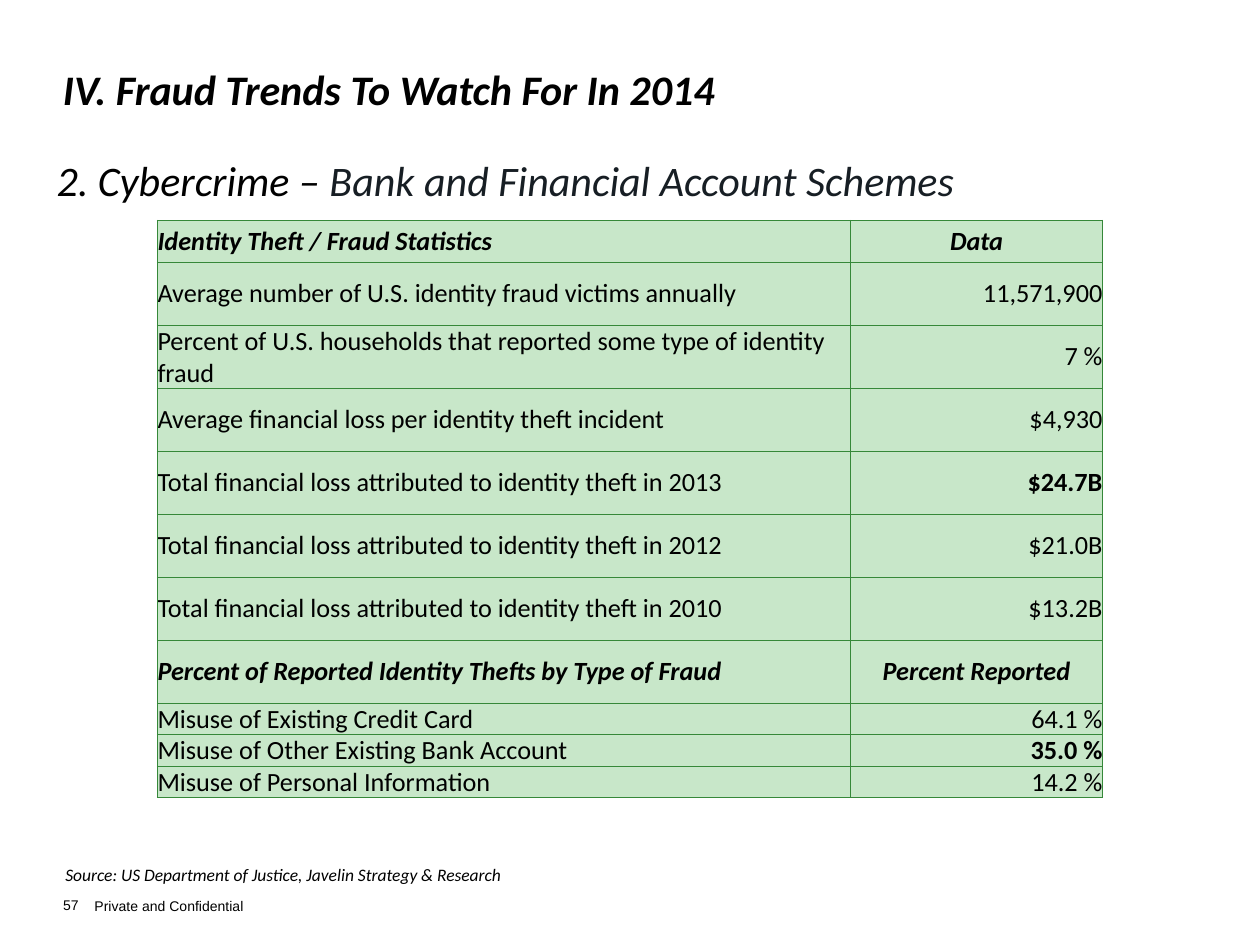
"""Build the identity theft statistics slide."""
from lxml import etree
from pptx import Presentation, util as u
from pptx.dml.color import RGBColor
from pptx.enum import text as t
from pptx.oxml.ns import qn

BLACK, NAVY, GREEN, MINT = "000000", "171E24", "368839", "C8E7C9"
LEFT, MID, RIGHT = t.PP_ALIGN.LEFT, t.PP_ALIGN.CENTER, t.PP_ALIGN.RIGHT
TOP, LOW = t.MSO_ANCHOR.TOP, t.MSO_ANCHOR.BOTTOM

# Each box: place, runs, font, size, bold, italic, anchor, wrap, inset
BOXES = [
    ((0.5, 0.5, 9, 0.75), [("IV. Fraud Trends To Watch For In 2014", BLACK)],
     "Calibri", 24, True, True, TOP, True, (0, 0)),
    ((0.45, 1.17, 8.8, 4.5),
     [("2. Cybercrime – ", BLACK), ("Bank and Financial Account Schemes", NAVY)],
     "Calibri", 24, False, True, TOP, True, (0, 0)),
    ((0.42, 6.81, 6.42, 0.27),
     [("Source: US Department of Justice, Javelin Strategy & Research", BLACK)],
     "Calibri", 10, False, True, TOP, True, (0.1, 0.05)),
    ((0.5, 7.01, 0.31, 0.24), [("57", BLACK)],
     "Arial", 8, False, False, LOW, True, (0, 0)),
    ((0.75, 7.12, 1.2, 0.14), [("Private and Confidential", BLACK)],
     "Arial", 8, False, False, LOW, False, (0, 0)),
]
ROWS = [
    ("Identity Theft / Fraud Statistics", "Data", 0.33),
    ("Average number of U.S. identity fraud victims annually", "11,571,900", 0.5),
    ("Percent of U.S. households that reported some type of identity fraud", "7 %", 0.5),
    ("Average financial loss per identity theft incident", "$4,930", 0.5),
    ("Total financial loss attributed to identity theft in 2013", "$24.7B", 0.5),
    ("Total financial loss attributed to identity theft in 2012", "$21.0B", 0.5),
    ("Total financial loss attributed to identity theft in 2010", "$13.2B", 0.5),
    ("Percent of Reported Identity Thefts by Type of Fraud", "Percent Reported", 0.5),
    ("Misuse of Existing Credit Card", "64.1 %", 0.25),
    ("Misuse of Other Existing Bank Account", "35.0 %", 0.25),
    ("Misuse of Personal Information", "14.2 %", 0.25),
]
COLS = (5.5, 2)
HEADS = {"Data", "Percent Reported"}
STRONG = {"$24.7B", "35.0 %"}


def style(run, face, size, bold, slant, tint):
    font = run.font
    font.name, font.size = face, u.Pt(size)
    font.bold, font.italic = bold, slant
    font.color.rgb = RGBColor.from_string(tint)


def add_box(slide, place, runs, face, size, bold, slant, anchor, wrap, inset):
    frame = slide.shapes.add_textbox(*map(u.Inches, place)).text_frame
    frame.word_wrap, frame.vertical_anchor = wrap, anchor
    frame.margin_left = frame.margin_right = u.Inches(inset[0])
    frame.margin_top = frame.margin_bottom = u.Inches(inset[1])
    para = frame.paragraphs[0]
    for words, tint in runs:
        run = para.add_run()
        run.text = words
        style(run, face, size, bold, slant, tint)
    return para


def edge(cell):
    props = cell._tc.get_or_add_tcPr()
    for spot, side in enumerate(("lnL", "lnR", "lnT", "lnB")):
        line = etree.Element(qn(f"a:{side}"), w=str(u.Pt(0.75)))
        fill = etree.SubElement(line, qn("a:solidFill"))
        etree.SubElement(fill, qn("a:srgbClr"), val=GREEN)
        props.insert(spot, line)


def fill_cell(cell, words, align, bold, slant):
    cell.text = words
    cell.margin_left = cell.margin_right = cell.margin_top = cell.margin_bottom = 0
    cell.vertical_anchor = t.MSO_ANCHOR.MIDDLE
    cell.fill.solid()
    cell.fill.fore_color.rgb = RGBColor.from_string(MINT)
    para = cell.text_frame.paragraphs[0]
    para.alignment = align
    style(para.runs[0], "Calibri", 15, bold, slant, BLACK)
    edge(cell)


def add_stats(slide):
    high = sum(row[2] for row in ROWS)
    place = map(u.Inches, (1.25, 1.75, sum(COLS), high))
    table = slide.shapes.add_table(len(ROWS), len(COLS), *place).table
    table.first_row = table.horz_banding = False
    for col, wide in zip(table.columns, COLS):
        col.width = u.Inches(wide)
    for row, (label, value, tall) in zip(table.rows, ROWS):
        row.height = u.Inches(tall)
        head = value in HEADS
        fill_cell(row.cells[0], label, LEFT, head, head)
        fill_cell(row.cells[1], value, MID if head else RIGHT,
                  head or value in STRONG, head)


def main():
    deck = Presentation()
    deck.slide_width, deck.slide_height = u.Inches(10), u.Inches(7.5)
    slide = deck.slides.add_slide(deck.slide_layouts[6])
    paras = [add_box(slide, *box) for box in BOXES]
    paras[1].line_spacing, paras[1].space_after = 1.15, u.Pt(10)
    add_stats(slide)
    deck.save("out.pptx")


if __name__ == "__main__":
    main()
